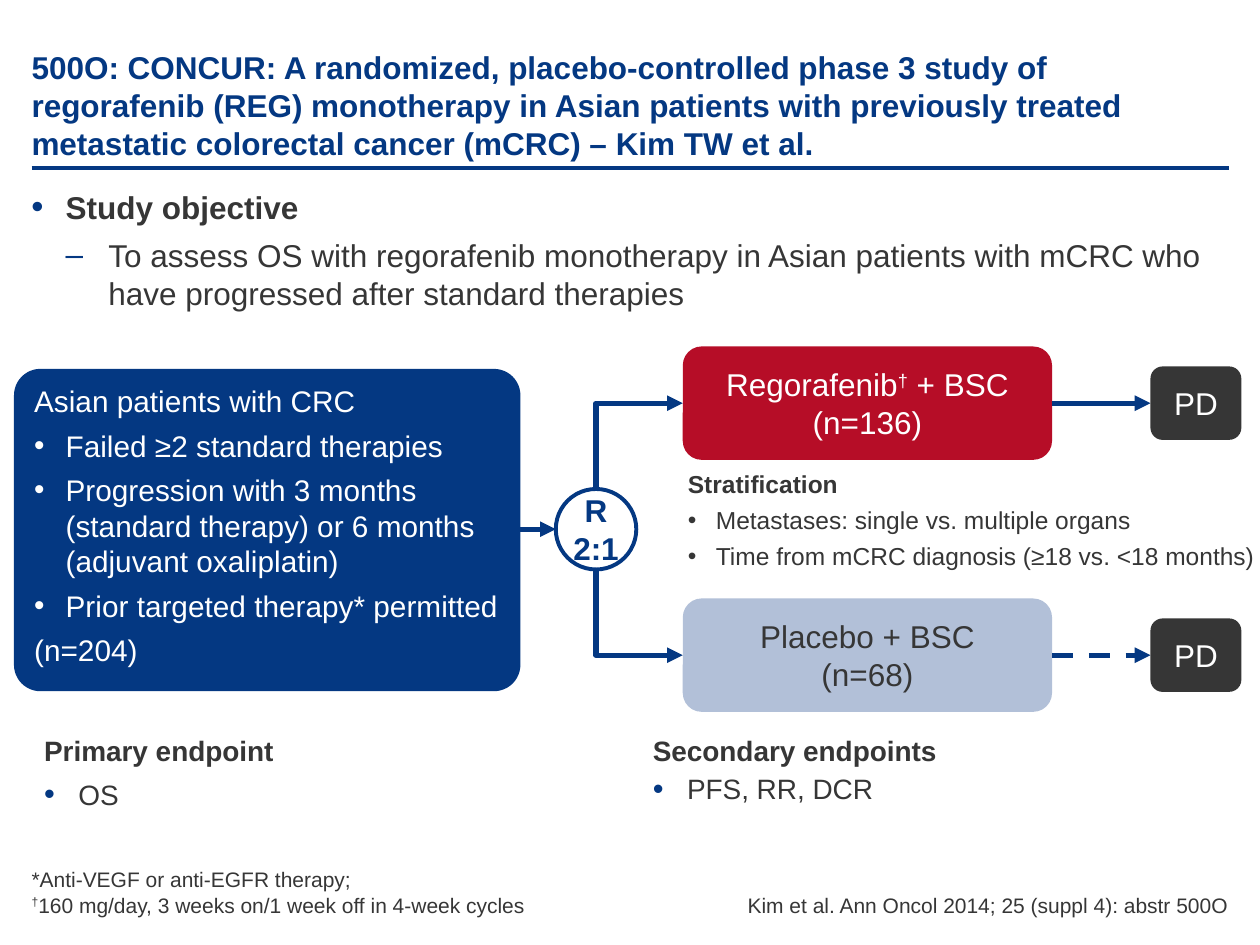
from lxml import etree
from pptx import Presentation
from pptx.dml.color import RGBColor
from pptx.enum.dml import MSO_LINE
from pptx.enum.shapes import MSO_CONNECTOR, MSO_SHAPE
from pptx.enum.text import MSO_ANCHOR, MSO_AUTO_SIZE, PP_ALIGN
from pptx.oxml.ns import qn
from pptx.util import Pt

LEFT, MID, RIGHT = PP_ALIGN.LEFT, PP_ALIGN.CENTER, PP_ALIGN.RIGHT
TOP, CENTER, BASE = MSO_ANCHOR.TOP, MSO_ANCHOR.MIDDLE, MSO_ANCHOR.BOTTOM
LINE, ELBOW = MSO_CONNECTOR.STRAIGHT, MSO_CONNECTOR.ELBOW
ROUND, OVAL = MSO_SHAPE.ROUNDED_RECTANGLE, MSO_SHAPE.OVAL
DASH, FIXED = MSO_LINE.DASH, MSO_AUTO_SIZE.NONE
COLOR = {"navy": "043882", "dark": "363636", "white": "FFFFFF",
         "red": "B60D27", "pale": "B2C0D8"}


def rgb(name):
    return RGBColor.from_string(COLOR[name])


def setup(frame, pad, anchor=TOP, wrap=True):
    frame.auto_size = FIXED
    frame.word_wrap = wrap
    frame.vertical_anchor = anchor
    (frame.margin_left, frame.margin_top,
     frame.margin_right, frame.margin_bottom) = map(Pt, pad)


def bullet(para, mark, left, hang, tint=None, scale=100):
    props = para._p.get_or_add_pPr()
    props.set("marL", str(Pt(left)))
    props.set("indent", str(-Pt(hang)))
    if tint:
        fill = etree.SubElement(props, qn("a:buClr"))
        etree.SubElement(fill, qn("a:srgbClr"), val=COLOR[tint])
    etree.SubElement(props, qn("a:buSzPct"), val=str(scale * 1000))
    etree.SubElement(props, qn("a:buFont"), typeface="Arial")
    etree.SubElement(props, qn("a:buChar"), char=mark)


def write(frame, rows, size, color, align=LEFT, bold=False, after=0, before=0):
    for i, row in enumerate(rows):
        text, mark, heavy = row if isinstance(row, tuple) else (row, None, bold)
        para = frame.paragraphs[0] if i == 0 else frame.add_paragraph()
        for part in text.partition("†"):
            if part:
                run = para.add_run()
                run.text = part
                if part == "†":
                    run._r.get_or_add_rPr().set("baseline", "30000")
        if mark:
            bullet(para, **mark)
        para.alignment = align
        para.space_after = Pt(after)
        para.space_before = Pt(before if i else 0)
        font = para.font
        font.name, font.size, font.bold = "Arial", Pt(size), heavy
        font.color.rgb = rgb(color)


def label(slide, box, rows, size, pad=(0, 3.6, 0, 3.6), anchor=TOP,
          wrap=True, **style):
    frame = slide.shapes.add_textbox(*map(Pt, box)).text_frame
    setup(frame, pad, anchor, wrap)
    write(frame, rows, size, "dark", **style)


def block(slide, box, fill, rows, size=18, ink="white", kind=ROUND, curve=0.167,
          pad=(7.2, 0, 7.2, 0), anchor=CENTER, wrap=True, align=MID, **style):
    shape = slide.shapes.add_shape(kind, *map(Pt, box))
    shape.shadow.inherit = False
    if fill:
        shape.fill.solid()
        shape.fill.fore_color.rgb = rgb(fill)
        shape.line.fill.background()
    else:
        shape.fill.background()
        shape.line.color.rgb = rgb(ink)
        shape.line.width = Pt(2.25)
    if kind == ROUND:
        shape.adjustments[0] = curve
    setup(shape.text_frame, pad, anchor, wrap)
    write(shape.text_frame, rows, size, ink, align, **style)


def link(slide, start, end, tip="tailEnd", kind=LINE, width=3, dash=None):
    line = slide.shapes.add_connector(kind, *map(Pt, start + end))
    line.line.color.rgb = rgb("navy")
    line.line.width = Pt(width)
    if dash:
        line.line.dash_style = dash
    props = line._element.spPr
    if kind == ELBOW:
        props.find(qn("a:prstGeom")).set("prst", "bentConnector2")
    if tip:
        etree.SubElement(props.find(qn("a:ln")), qn(f"a:{tip}"), type="triangle")
    etree.SubElement(props, qn("a:effectLst"))


def header(slide, box, text):
    x, y, w, h = box
    title = slide.shapes.title
    title.left, title.top, title.width, title.height = map(Pt, box)
    setup(title.text_frame, (0, 3.6, 0, 0), BASE)
    write(title.text_frame, [text], 18, "navy", bold=True)
    rule = y + h + 3.6
    link(slide, (x, rule), (x + w, rule), tip=None, width=2.25)


def patients(slide, box):
    dot = dict(mark="•", left=18, hang=18)
    block(slide, box, "navy", [
        "Asian patients with CRC",
        ("Failed ≥2 standard therapies", dot, False),
        ("Progression with 3 months (standard therapy) or 6 months "
         "(adjuvant oxaliplatin)", dot, False),
        ("Prior targeted therapy* permitted", dot, False),
        "(n=204)",
    ], size=17, curve=0.082, pad=(7.2, 3.6, 7.2, 3.6), anchor=TOP,
        align=LEFT, after=5)


def arm(slide, box, fill, ink, rows, dash=None):
    x, y, w, h = box
    mid, end = y + h / 2, x + w + 56.2
    block(slide, box, fill, rows, ink=ink)
    link(slide, (x + w, mid), (end, mid), dash=dash)
    block(slide, (end, mid - 21, 52, 42), "dark", ["PD"])


def split(slide, box, entry, target, rise):
    x, y, w, h = box
    cx, cy = x + w / 2, y + h / 2
    link(slide, (entry, cy), (x, cy))
    for edge, level in ((y, cy - rise), (y + h, cy + rise)):
        link(slide, (target, level), (cx, edge), tip="headEnd", kind=ELBOW)
    block(slide, box, None, ["R", "2:1"], ink="navy", kind=OVAL,
          wrap=False, bold=True)


def notes(slide, box):
    x, y, w, h = box
    label(slide, (x, y, w / 2, h),
          ["*Anti-VEGF or anti-EGFR therapy;",
           "†160 mg/day, 3 weeks on/1 week off in 4-week cycles"],
          12, pad=(0, 0, 0, 0), anchor=BASE)
    label(slide, (x + w / 2, y, w / 2, h),
          ["Kim et al. Ann Oncol 2014; 25 (suppl 4): abstr 500O"],
          12, pad=(0, 0, 0, 0), anchor=BASE, align=RIGHT)


def main():
    deck = Presentation()
    deck.slide_width, deck.slide_height = Pt(720), Pt(540)
    slide = deck.slides.add_slide(deck.slide_layouts[5])
    header(slide, (18, 18, 684, 74.2),
           "500O: CONCUR: A randomized, placebo-controlled phase 3 study of "
           "regorafenib (REG) monotherapy in Asian patients with previously "
           "treated metastatic colorectal cancer (mCRC) – Kim TW et al.")

    dot = dict(mark="•", left=19.6, hang=19.6, tint="navy", scale=110)
    dash = dict(mark="–", left=44, hang=24.4, tint="navy")
    small = dict(mark="•", left=16, hang=16)
    label(slide, (18, 103.7, 684, 80), [
        ("Study objective", dot, True),
        ("To assess OS with regorafenib monotherapy in Asian patients with "
         "mCRC who have progressed after standard therapies", dash, False),
    ], 18, after=6)

    patients(slide, (8, 210.8, 289.4, 184.2))
    split(slide, (317.6, 279.4, 46, 46), 297.4, 390.2, 72)
    arm(slide, (390.2, 198, 211, 64.8), "red", "white",
        ["Regorafenib† + BSC", "(n=136)"])
    arm(slide, (390.2, 342, 211, 64.8), "pale", "dark",
        ["Placebo + BSC", "(n=68)"], DASH)
    label(slide, (386, 264.2, 350, 70.6), [
        ("Stratification", None, True),
        ("Metastases: single vs. multiple organs", small, False),
        ("Time from mCRC diagnosis (≥18 vs. <18 months)", small, False),
    ], 14, pad=(7.2, 3.6, 7.2, 3.6), after=4)

    label(slide, (25.2, 415.4, 336, 64.8),
          [("Primary endpoint", None, True), ("OS", dot, False)], 16, after=6)
    label(slide, (373, 415.4, 347, 64.8),
          [("Secondary endpoints", None, True), ("PFS, RR, DCR", dot, False)],
          16, before=3)
    notes(slide, (18, 495.4, 684, 28.8))
    deck.save("out.pptx")


if __name__ == "__main__":
    main()
